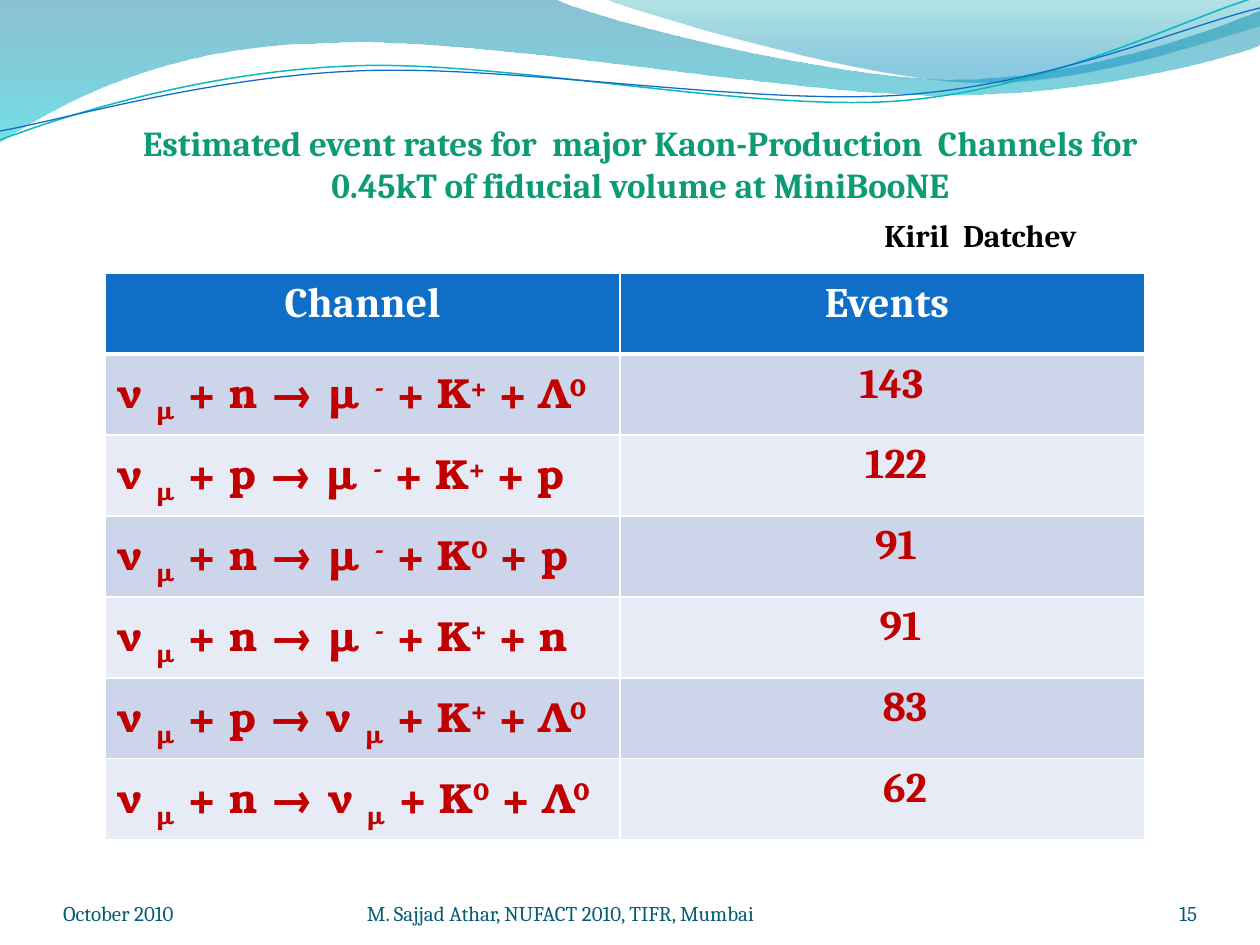
from pptx import Presentation, util as u
from pptx.dml.color import RGBColor
from pptx.enum import text
from pptx.oxml import parse_xml
from pptx.oxml.ns import nsdecls, qn

PX = 914400 / 126
THEME = {
    "font": "Cambria", "formula_font": "TeX Gyre Bonum",
    "title": "0C9B74", "author": "000000", "footer": "045D75",
    "header": "0F6FC6", "header_text": "FFFFFF", "body_text": "C00000",
    "bands": ("CCD5EA", "E7EBF5"), "border": "FFFFFF",
    "wave_line": ("0AB8BF", "0F6FC6"),
    "title_size": 20, "author_size": 18, "table_size": 24, "footer_size": 12,
}
LEFT, CENTER, RIGHT = (text.PP_ALIGN.LEFT, text.PP_ALIGN.CENTER, text.PP_ALIGN.RIGHT)
GROW = text.MSO_AUTO_SIZE.SHAPE_TO_FIT_TEXT
SUB, SUP = -25000, 30000
SPACE = 9

WAVES = [
    ([(0, 0), (554, -1), (600, 21, 837, 79, 955, 79), (1075, 79, 1207, 33, 1260, 11),
      (1261, 45), (1239, 55, 1096, 96, 940, 95), (784, 95, 481, 35, 324, 43),
      (163, 45, 58, 105, -1, 142), (0, 0)],
     [(0, "0074A1", 45), (1, "00C6CF", 55)]),
    ([(604, -1), (641, 14, 859, 78, 969, 82), (1079, 87, 1211, 40, 1260, 26),
      (1260, 0), (604, -1)],
     [(0, "00A1A9", 30), (0.8, "008BBF", 45)]),
]
STRANDS = [
    ([(0, 140), (60, 117, 199, 72, 349, 66), (498, 59, 747, 112, 898, 101),
      (1050, 89, 1182, 19, 1257, -3)], 0.85),
    ([(0, 131), (59, 121, 207, 77, 357, 71), (508, 64, 752, 106, 903, 95),
      (1053, 84, 1185, 26, 1260, 8)], 0.75),
]

NEUTRINO = [("ν ", 0), ("μ", SUB)]
MUON = [("μ ", 0), ("-", SUP)]
LAMBDA = [("Λ", 0), ("0", SUP)]
PROTON, NEUTRON = [("p", 0)], [("n", 0)]
CHANNELS = [
    ("n", MUON, "+", LAMBDA, "143", 2),
    ("p", MUON, "+", PROTON, "122", 3),
    ("n", MUON, "0", PROTON, "91", 3),
    ("n", MUON, "+", NEUTRON, "91", 4),
    ("p", NEUTRINO, "+", LAMBDA, "83", 5),
    ("n", NEUTRINO, "0", LAMBDA, "62", 5),
]


def px(n):
    return u.Emu(round(n * PX))


def rgb(name):
    return RGBColor.from_string(THEME.get(name, name))


def write(p, runs, size, color, bold=True, font="font", align=LEFT):
    p.alignment = align
    fmt = {"size": u.Pt(THEME[size]), "bold": bold, "name": THEME[font]}
    for words, baseline in runs:
        r = p.add_run()
        r.text = words
        for key, value in fmt.items():
            setattr(r.font, key, value)
        r.font.color.rgb = rgb(color)
        if baseline:
            r.font._element.set("baseline", str(baseline))


def add_text(s, box, words, size, color, bold=True, align=LEFT, **frame):
    tf = s.shapes.add_textbox(*map(px, box)).text_frame
    for key, value in {"word_wrap": True, **frame}.items():
        setattr(tf, key, value)
    write(tf.paragraphs[0], [(words, 0)], size, color, bold, align=align)


def add_curve(s, box, steps, close):
    x, y = box[:2]
    ends = [(px(x + step[-2]), px(y + step[-1])) for step in steps]
    fb = s.shapes.build_freeform(*ends[0])
    fb.add_line_segments(ends[1:], close=close)
    sp = fb.convert_to_shape()
    sp.shadow.inherit = False
    lines = list(sp._element.iter(qn("a:lnTo")))
    for line, step in zip(lines, steps[1:]):
        if len(step) == 6:
            pts = "".join(f'<a:pt x="{px(x + cx) - sp.left}" y="{px(y + cy) - sp.top}"/>'
                          for cx, cy in zip(step[::2], step[1::2]))
            curve = parse_xml(f'<a:cubicBezTo {nsdecls("a")}>{pts}</a:cubicBezTo>')
            line.getparent().replace(line, curve)
    return sp


def add_waves(s, box):
    for steps, stops in WAVES:
        sp = add_curve(s, box, steps, True)
        sp.line.fill.background()
        sp.fill.gradient()
        sp.fill.gradient_angle = 270
        for stop, (position, color, opacity) in zip(sp.fill.gradient_stops, stops):
            stop.position = position
            stop.color.rgb = rgb(color)
            clr = stop._gs.find(qn("a:srgbClr"))
            clr.append(parse_xml(f'<a:alpha {nsdecls("a")} val="{opacity * 1000}"/>'))
    for (steps, width), color in zip(STRANDS, THEME["wave_line"]):
        sp = add_curve(s, box, steps, False)
        sp.fill.background()
        sp.line.color.rgb = rgb(color)
        sp.line.width = u.Pt(width)


def add_heading(s, box):
    x, y, w, h = box
    add_text(s, (x, y, w, 97),
             "Estimated event rates for  major Kaon-Production  Channels for "
             "0.45kT of fiducial volume at MiniBooNE",
             "title_size", "title", align=CENTER, auto_size=GROW)
    add_text(s, (x + 746, y + 95, 252, h - 95), "Kiril  Datchev",
             "author_size", "author", auto_size=GROW)


def add_borders(cell, top=1, bottom=1):
    tcPr = cell._tc.get_or_add_tcPr()
    for i, (side, width) in enumerate(zip("LRTB", (1, 1, top, bottom))):
        tcPr.insert(i, parse_xml(
            f'<a:ln{side} {nsdecls("a")} w="{u.Pt(width)}"><a:solidFill>'
            f'<a:srgbClr val="{THEME["border"]}"/></a:solidFill></a:ln{side}>'))


def fill_cell(cell, color, runs, ink, **kw):
    cell.fill.solid()
    cell.fill.fore_color.rgb = rgb(color)
    write(cell.text_frame.paragraphs[0], runs, "table_size", ink, **kw)


def add_rates(s, box):
    tbl = s.shapes.add_table(len(CHANNELS) + 1, 2, *map(px, box)).table
    for col, width in zip(tbl.columns, (515, box[2] - 515)):
        col.width = px(width)
    for i, row in enumerate(tbl.rows):
        row.height = px(box[3] / len(tbl.rows))
        for cell in row.cells:
            add_borders(cell, 3 if i == 1 else 1, 3 if i == 0 else 1)
    for c, words in enumerate(("Channel", "Events")):
        fill_cell(tbl.cell(0, c), "header", [(words, 0)], "header_text", align=CENTER)
    tbl.cell(0, 1).margin_left += px(SPACE)
    for i, (target, lepton, charge, baryon, events, shift) in enumerate(CHANNELS):
        band = THEME["bands"][i % 2]
        runs = [*NEUTRINO, (f" + {target} → ", 0), *lepton, (" + K", 0),
                (charge, SUP), (" + ", 0), *baryon]
        fill_cell(tbl.cell(i + 1, 0), band, runs, "body_text", font="formula_font")
        cell = tbl.cell(i + 1, 1)
        fill_cell(cell, band, [(events, 0)], "body_text", align=CENTER)
        cell.margin_left += px(shift * SPACE)


def add_footer(s, box):
    x, y, w, h = box
    parts = [
        (0, 294, "October 2010", LEFT),
        (304, 462, "M. Sajjad Athar, NUFACT 2010, TIFR, Mumbai", LEFT),
        (w - 105, 105, "15", RIGHT),
    ]
    flat = dict.fromkeys(("margin_left", "margin_top", "margin_right", "margin_bottom"), 0)
    for dx, width, words, align in parts:
        add_text(s, (x + dx, y, width, h), words, "footer_size", "footer", False, align,
                 vertical_anchor=text.MSO_ANCHOR.BOTTOM, **flat)


def main():
    prs = Presentation()
    prs.slide_width, prs.slide_height = px(1260), px(945)
    s = prs.slides.add_slide(prs.slide_layouts[6])
    add_waves(s, (0, 0, 1260, 142))
    add_footer(s, (63, 876, 1134, 50))
    add_rates(s, (105, 273, 1040, 567))
    add_heading(s, (126, 115, 1029, 144))
    prs.save("out.pptx")


if __name__ == "__main__":
    main()
